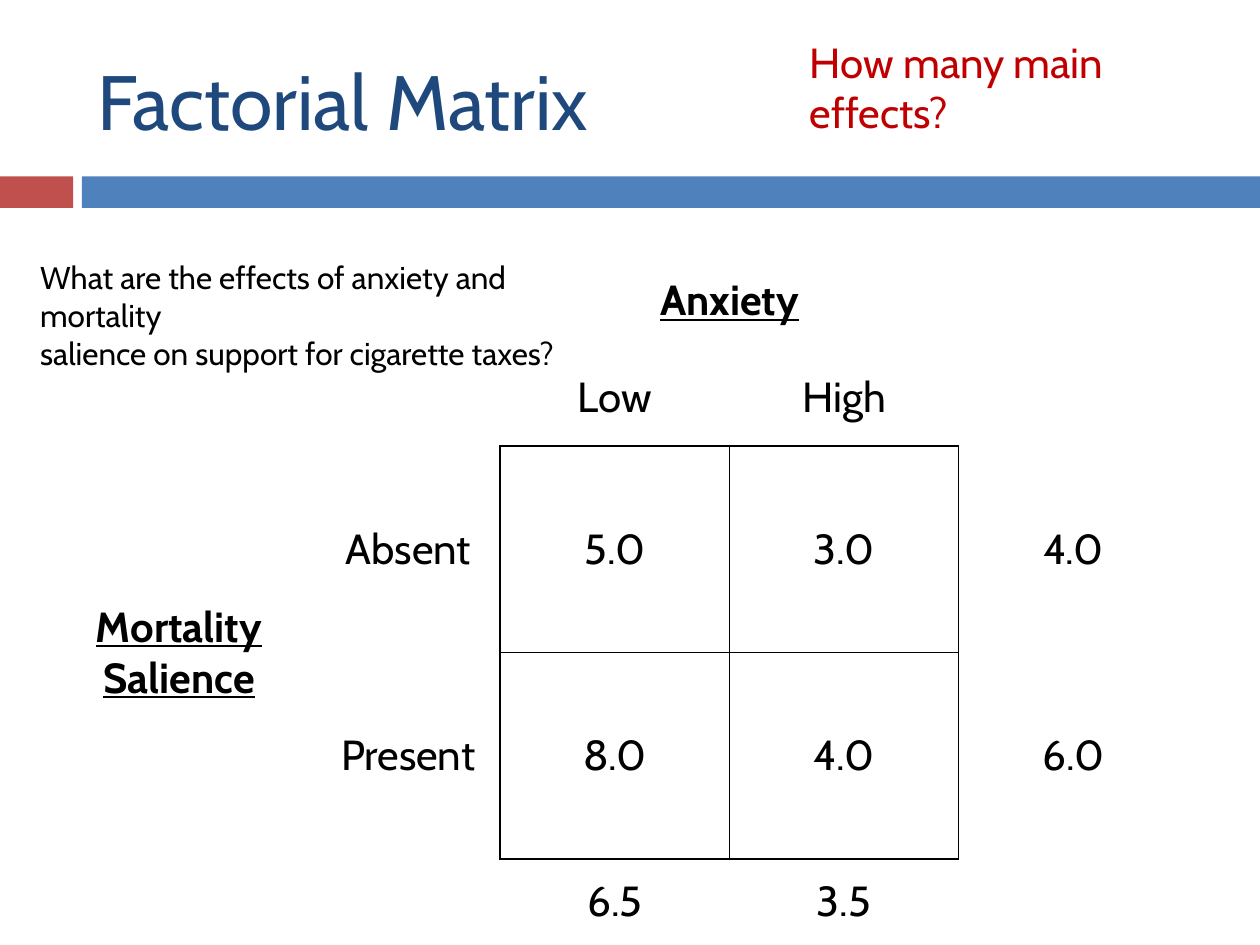
from lxml import etree
from pptx import Presentation
from pptx.dml.color import RGBColor
from pptx.enum import shapes, text
from pptx.oxml.ns import qn
from pptx.util import Inches, Pt

# Content
TITLE = "Factorial Matrix"
RESEARCH_QUESTION = ["What are the effects of anxiety and mortality ",
                     "salience on support for cigarette taxes?"]
PROMPT = ["How many main effects?"]
MATRIX = [
    ["", "", "Anxiety", "", ""],
    ["", "", "Low", "High", ""],
    ["Mortality\nSalience", "Absent", "5.0", "3.0", "4.0"],
    ["", "Present", "8.0", "4.0", "6.0"],
    ["", "", "6.5", "3.5", ""],
]
FACTORS = {(0, 2): (0, 3), (2, 0): (3, 0)}  # factor heading: last merged cell
CONDITIONS = {(r, c) for r in (2, 3) for c in (2, 3)}
COLUMN_WIDTHS = [2.18, 1.46, 1.82, 1.82, 1.82]
ROW_HEIGHTS = [0.77, 0.77, 1.64, 1.64, 0.67]
BANDS = [(0, 0.58, "accent"), (0.65, 9.35, "band")]

THEME = {
    "font": "Cabin",
    "title": "1F497D", "body": "000000", "prompt": "C00000",
    "accent": "C0504D", "band": "4F81BD",
    "title_size": 44, "matrix_size": 24, "question_size": 18,
}
NO_TABLE_STYLE = "{2D5ABB26-0587-4C30-8999-92F81FD0307C}"
SIDES = {"a:lnL": (0, -1), "a:lnR": (0, 1), "a:lnT": (-1, 0), "a:lnB": (1, 0)}


def color(name):
    return RGBColor.from_string(THEME[name])


def write(paragraph, lines, size, ink="body", heading=False):
    for i, line in enumerate(lines):
        if i:
            paragraph.add_line_break()
        run = paragraph.add_run()
        run.text = line
        run.font.name = THEME["font"]
        run.font.size = Pt(THEME[size])
        run.font.color.rgb = color(ink)
        run.font.bold = run.font.underline = heading


def add_note(slide, lines, box, size, ink="body"):
    frame = slide.shapes.add_textbox(*map(Inches, box)).text_frame
    frame.word_wrap = True
    write(frame.paragraphs[0], lines, size, ink)


def draw_borders(cell, row, col):
    """Rule every side that touches one of the four conditions."""
    properties = cell._tc.get_or_add_tcPr()
    for tag, (down, right) in SIDES.items():
        if CONDITIONS & {(row, col), (row + down, col + right)}:
            line = etree.SubElement(properties, qn(tag), w=str(Pt(1)))
            fill = etree.SubElement(line, qn("a:solidFill"))
            etree.SubElement(fill, qn("a:srgbClr"), val=THEME["body"])


def add_matrix(slide):
    table = slide.shapes.add_table(
        len(MATRIX), len(COLUMN_WIDTHS), Inches(0.33), Inches(2),
        Inches(sum(COLUMN_WIDTHS)), Inches(sum(ROW_HEIGHTS))).table
    table.first_row = table.horz_banding = False
    table._tbl.tblPr.find(qn("a:tableStyleId")).text = NO_TABLE_STYLE
    for column, width in zip(table.columns, COLUMN_WIDTHS):
        column.width = Inches(width)
    for row, height in zip(table.rows, ROW_HEIGHTS):
        row.height = Inches(height)
    for first, last in FACTORS.items():
        table.cell(*first).merge(table.cell(*last))
    for r, labels in enumerate(MATRIX):
        for c, label in enumerate(labels):
            cell = table.cell(r, c)
            draw_borders(cell, r, c)
            cell.fill.background()
            cell.vertical_anchor = text.MSO_ANCHOR.MIDDLE
            if label:
                paragraph = cell.text_frame.paragraphs[0]
                paragraph.alignment = text.PP_ALIGN.CENTER
                write(paragraph, label.split("\n"), "matrix_size",
                      heading=(r, c) in FACTORS)


def main():
    deck = Presentation()
    deck.slide_width, deck.slide_height = Inches(10), Inches(7.5)
    slide = deck.slides.add_slide(deck.slide_layouts[5])

    # Bands under the title
    for left, width, fill in BANDS:
        band = slide.shapes.add_shape(
            shapes.MSO_SHAPE.RECTANGLE,
            *map(Inches, (left, 1.4, width, 0.25)))
        band.shadow.inherit = False
        band.fill.solid()
        band.fill.fore_color.rgb = color(fill)
        band.line.fill.background()

    # Title
    title = slide.shapes.title
    title.left, title.top, title.width, title.height = map(
        Inches, (0.67, 0.25, 8.92, 1.08))
    title.text_frame.vertical_anchor = text.MSO_ANCHOR.MIDDLE
    heading = title.text_frame.paragraphs[0]
    heading.alignment = text.PP_ALIGN.LEFT
    write(heading, [TITLE], "title_size", "title")

    # Factorial table and the two questions
    add_matrix(slide)
    add_note(slide, RESEARCH_QUESTION, (0.22, 2, 4.91, 0.71), "question_size")
    add_note(slide, PROMPT, (6.33, 0.24, 3.44, 0.5), "matrix_size", "prompt")

    deck.save("out.pptx")


if __name__ == "__main__":
    main()
